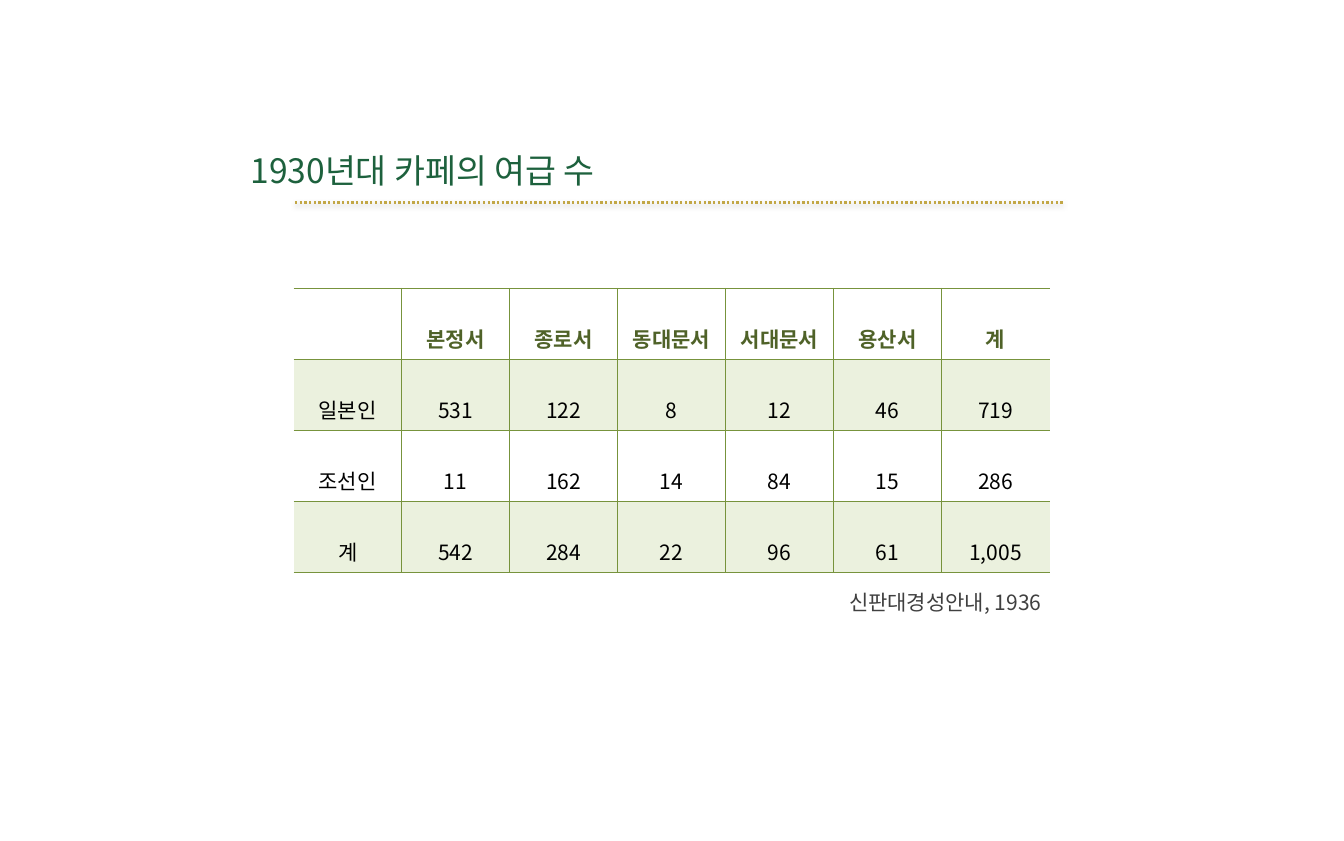
from lxml import etree
from pptx import Presentation
from pptx.dml.color import RGBColor
from pptx.enum.dml import MSO_LINE
from pptx.enum.shapes import MSO_CONNECTOR
from pptx.enum.text import MSO_ANCHOR, MSO_AUTO_SIZE, PP_ALIGN
from pptx.oxml import parse_xml
from pptx.oxml.ns import nsdecls, qn
from pptx.util import Cm, Pt

FONT = "Noto Sans CJK KR"
GREEN = RGBColor(0x1D, 0x61, 0x3D)
OLIVE = RGBColor(0x4F, 0x62, 0x28)
BORDER = RGBColor(0x77, 0x93, 0x3C)
BAND = RGBColor(0xEB, 0xF1, 0xDE)
GOLD = RGBColor(0xC2, 0xA7, 0x46)
GRAY = RGBColor(0x40, 0x40, 0x40)
BLACK = RGBColor(0, 0, 0)
DOTS = MSO_LINE.ROUND_DOT
STRAIGHT = MSO_CONNECTOR.STRAIGHT
MIDDLE = MSO_ANCHOR.MIDDLE
FIXED = MSO_AUTO_SIZE.NONE
GROW = MSO_AUTO_SIZE.SHAPE_TO_FIT_TEXT
LEFT, CENTER, RIGHT = PP_ALIGN.LEFT, PP_ALIGN.CENTER, PP_ALIGN.RIGHT

ROWS = [
    ["", "본정서", "종로서", "동대문서", "서대문서", "용산서", "계"],
    ["일본인", "531", "122", "8", "12", "46", "719"],
    ["조선인", "11", "162", "14", "84", "15", "286"],
    ["계", "542", "284", "22", "96", "61", "1,005"],
]


def write(frame, text, size, color, align, spacing, bold=False):
    para = frame.paragraphs[0]
    para.text = text
    para.alignment = align
    para.line_spacing = spacing
    font = para.font
    font.name = FONT
    font.size = Pt(size)
    font.bold = bold
    font.color.rgb = color
    props = para._p.get_or_add_pPr().find(qn("a:defRPr"))
    etree.SubElement(props, qn("a:ea")).set("typeface", FONT)


def add_title(slide, text):
    title = slide.shapes.title
    title.left, title.top = Cm(7.32), Cm(4.52)
    title.width, title.height = Cm(26), Cm(1.4)
    frame = title.text_frame
    frame.auto_size = FIXED
    frame.vertical_anchor = MIDDLE
    write(frame, text, 28.8, GREEN, LEFT, 0.9)


def add_rule(slide):
    rule = slide.shapes.add_connector(STRAIGHT, Cm(8.92), Cm(6.12), Cm(32.13), Cm(6.12))
    rule.line.color.rgb = GOLD
    rule.line.width = Pt(2)
    rule.line.dash_style = DOTS
    rule._element.spPr.append(parse_xml(
        f'<a:effectLst {nsdecls("a")}>'
        f'<a:outerShdw blurRad="{Pt(5)}" dist="{Pt(2.1)}" dir="5400000" rotWithShape="0">'
        '<a:srgbClr val="000000"><a:alpha val="30000"/></a:srgbClr>'
        '</a:outerShdw></a:effectLst>'))


def add_border(cell, side, shown):
    fill = f'<a:solidFill><a:srgbClr val="{BORDER}"/></a:solidFill>' if shown else "<a:noFill/>"
    cell._tc.get_or_add_tcPr().append(parse_xml(
        f'<a:ln{side} {nsdecls("a")} w="{Pt(1)}">{fill}</a:ln{side}>'))


def fill_cell(cell, text, row, col, last):
    head = row == 0
    write(cell.text_frame, text, 18, OLIVE if head else BLACK, CENTER, 2.0, head)
    for side, shown in (("L", col > 0), ("R", col < last), ("T", True), ("B", True)):
        add_border(cell, side, shown)
    if row % 2:
        cell.fill.solid()
        cell.fill.fore_color.rgb = BAND
    else:
        cell.fill.background()


def add_grid(slide, rows):
    count = len(rows[0])
    frame = slide.shapes.add_table(len(rows), count, Cm(8.88), Cm(8.72), Cm(22.86), Cm(8.6))
    table = frame.table
    table.first_row = False
    table.horz_banding = False
    for row, texts in enumerate(rows):
        for col, text in enumerate(texts):
            fill_cell(table.cell(row, col), text, row, col, count - 1)


def add_note(slide, text):
    box = slide.shapes.add_textbox(Cm(8.72), Cm(17.32), Cm(23.02), Cm(1.32))
    frame = box.text_frame
    frame.word_wrap = True
    frame.auto_size = GROW
    write(frame, text, 18, GRAY, RIGHT, 1.5)


def main():
    deck = Presentation()
    deck.slide_width, deck.slide_height = Cm(40.64), Cm(25.43)
    slide = deck.slides.add_slide(deck.slide_layouts[5])
    add_rule(slide)
    add_title(slide, "1930년대 카페의 여급 수")
    add_grid(slide, ROWS)
    add_note(slide, "신판대경성안내, 1936")
    deck.save("out.pptx")


if __name__ == "__main__":
    main()
